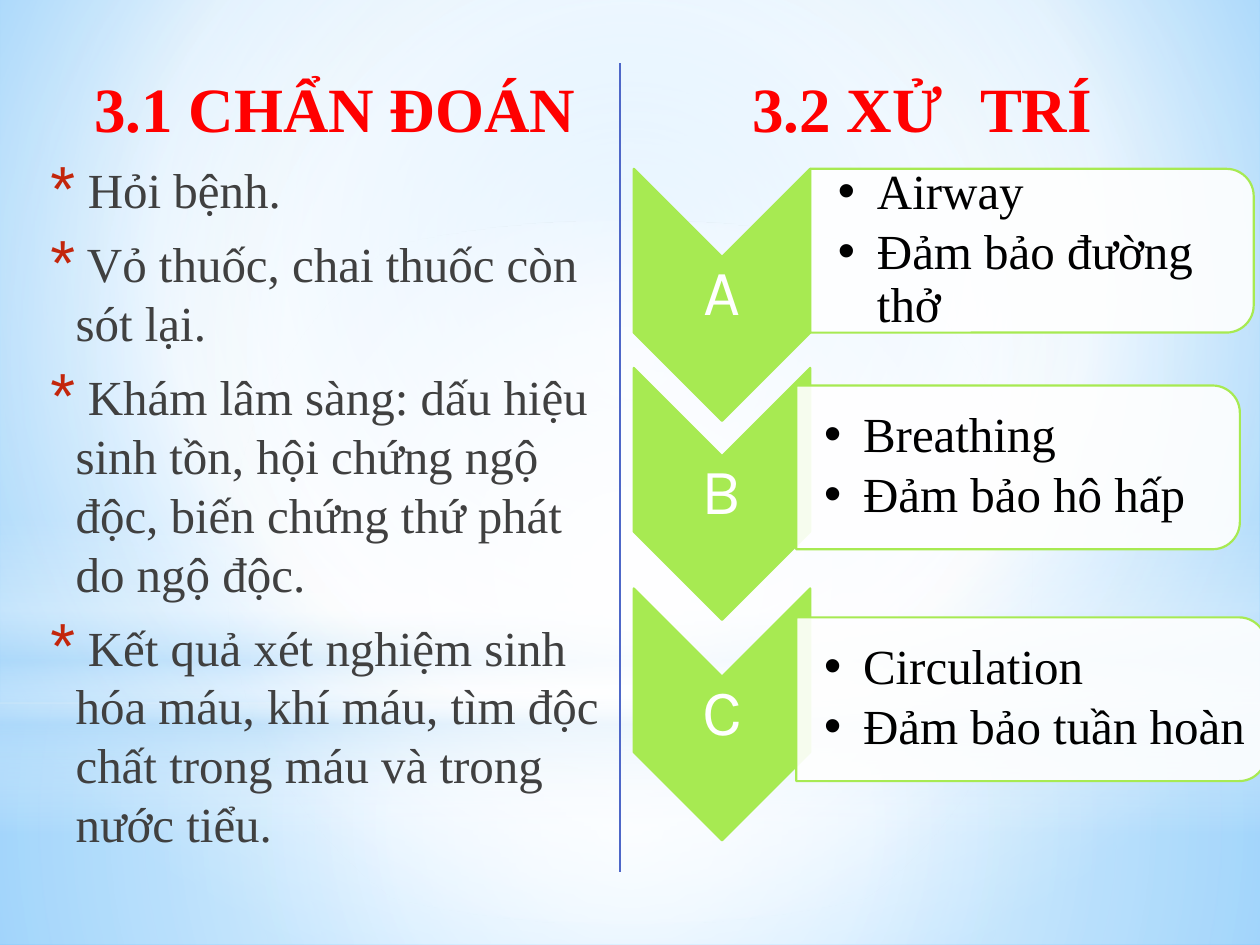
from lxml import etree
from pptx import Presentation
from pptx.dml.color import RGBColor
from pptx.enum import shapes as es, text as et
from pptx.oxml import parse_xml
from pptx.oxml.ns import nsdecls, qn
from pptx.util import Inches, Pt

SERIF, SANS = "Times New Roman", "Karla"
GREEN, RED, GREY = "A7EA52", "FF0000", "404040"
MID = (50, 50, 50, 50)

BACK = [(0, "9ED5FF", 100), (60, "FFFFFF", 100), (100, "5BB9FF", 100)]
# kind, box, gradient stops (place, colour, opacity), focus or None for vertical
LAYERS = [
    ("RECTANGLE", (0, 5.58, 10, 1.92),
     [(0, "FFFFFF", 91), (37, "FFFFFF", 76), (100, "B4DCFA", 79)], MID),
    ("RECTANGLE", (0, 0, 10, 5.58),
     [(0, "FFFFFF", 89), (48, "FFFFFF", 62), (100, "B4DCFA", 79)], MID),
    ("RECTANGLE", (0, 4.12, 10, 2.5),
     [(0, "FFFFFF", 0), (29, "FFFFFF", 30), (45, "B4DCFA", 40),
      (55, "FFFFFF", 26), (65, "B4DCFA", 60), (100, "FFFFFF", 0)], None),
    ("OVAL", (0, 1.75, 10, 5.58),
     [(0, "FFFFFF", 100), (56, "FFFFFF", 0)], MID),
]
SIGNS = [
    " Hỏi bệnh.",
    " Vỏ thuốc, chai thuốc còn sót lại.",
    " Khám lâm sàng: dấu hiệu sinh tồn, hội chứng ngộ độc, "
    "biến chứng thứ phát do ngộ độc.",
    " Kết quả xét nghiệm sinh hóa máu, khí máu, tìm độc chất "
    "trong máu và trong nước tiểu.",
]
# letter, chevron top, card left, card top, card width, lines
STEPS = [
    ("A", 1.34, 6.43, 1.34, 3.52, ["Airway", "Đảm bảo đường thở"]),
    ("B", 2.92, 6.32, 3.06, 3.52, ["Breathing", "Đảm bảo hô hấp"]),
    ("C", 4.67, 6.32, 4.9, 3.73, ["Circulation", "Đảm bảo tuần hoàn"]),
]
CHEV_X, CHEV_W, CHEV_H, CARD_H = 5.03, 1.4, 2, 1.3


def rgb(code):
    return RGBColor.from_string(code)


def inches(*nums):
    return [Inches(n) for n in nums]


def grad(stops, focus):
    """Gradient fill element: round about the focus, or top to bottom."""
    gs = "".join(
        f'<a:gs pos="{at * 1000}"><a:srgbClr val="{code}">'
        f'<a:alpha val="{seen * 1000}"/></a:srgbClr></a:gs>'
        for at, code, seen in stops)
    if focus:
        sides = " ".join(f'{s}="{n * 1000}"' for s, n in zip("ltrb", focus))
        way = f'<a:path path="circle"><a:fillToRect {sides}/></a:path>'
    else:
        way = '<a:lin ang="5400000" scaled="0"/>'
    return (f'<a:gradFill {nsdecls("a")} rotWithShape="1"><a:gsLst>{gs}'
            f'</a:gsLst>{way}</a:gradFill>')


def add_layer(kind, box, stops, focus):
    shape = slide.shapes.add_shape(
        getattr(es.MSO_SHAPE, kind), *inches(*box))
    shape.shadow.inherit = False
    shape.line.fill.background()
    geom = shape._element.spPr.find(qn("a:prstGeom"))
    geom.addnext(parse_xml(grad(stops, focus)))


def add_turned(kind, x, y, w, h, fill, seen=100):
    """Shape turned a quarter, given by the box it covers once turned."""
    shape = group.shapes.add_shape(
        kind, *inches(x + (w - h) / 2, y + (h - w) / 2, h, w))
    shape.rotation = 90
    shape.shadow.inherit = False
    shape.fill.solid()
    shape.fill.fore_color.rgb = rgb(fill)
    shape.line.color.rgb = rgb(GREEN)
    shape.line.width = Pt(1.25)
    if seen < 100:
        code = shape._element.spPr.find(qn("a:solidFill"))[0]
        etree.SubElement(code, qn("a:alpha")).set("val", str(seen * 1000))


def add_run(par, words, size, code, font=SERIF, bold=False):
    run = par.add_run()
    run.text = words
    run.font.size, run.font.name, run.font.bold = Pt(size), font, bold
    run.font.color.rgb = rgb(code)


def indent(par, left, first, sign=None, code=None, scale=100):
    """Set margins and bullet; no sign means no bullet."""
    props = par._p.get_or_add_pPr()
    props.set("marL", str(Inches(left)))
    props.set("indent", str(Inches(first)))
    if not sign:
        etree.SubElement(props, qn("a:buNone"))
        return
    if code:
        tint = etree.SubElement(props, qn("a:buClr"))
        etree.SubElement(tint, qn("a:srgbClr")).set("val", code)
    etree.SubElement(props, qn("a:buSzPct")).set("val", str(scale * 1000))
    etree.SubElement(props, qn("a:buFont")).set("typeface", "Arial")
    etree.SubElement(props, qn("a:buChar")).set("char", sign)


def next_par(frame):
    first = frame.paragraphs[0]
    return frame.add_paragraph() if first.runs else first


def add_box(x, y, w, h, left, pad):
    frame = group.shapes.add_textbox(*inches(x, y, w, h)).text_frame
    frame.word_wrap = True
    frame.vertical_anchor = et.MSO_ANCHOR.MIDDLE
    frame.margin_left = Inches(left)
    frame.margin_top = frame.margin_right = frame.margin_bottom = Inches(pad)
    return frame


def add_head(frame):
    par = next_par(frame)
    par.alignment = et.PP_ALIGN.CENTER
    par.space_after = Pt(3)
    indent(par, 0.05, 0)
    return par


deck = Presentation()
deck.slide_width, deck.slide_height = inches(10, 7.5)
slide = deck.slides.add_slide(deck.slide_layouts[1])
title = slide.shapes.title._element
title.getparent().remove(title)

slide.background.fill.solid()
plain = slide._element.cSld.find(".//" + qn("p:bgPr")).find(qn("a:solidFill"))
plain.getparent().replace(plain, parse_xml(grad(BACK, (20, 10, 20, 60))))
for layer in LAYERS:
    add_layer(*layer)

body = slide.placeholders[1]
body._element.getparent().append(body._element)
body.left, body.top, body.width, body.height = inches(0.25, 0.5, 9.33, 6.42)
frame = body.text_frame
frame.word_wrap = True
frame.auto_size = et.MSO_AUTO_SIZE.NONE
frame._txBody.bodyPr.set("numCol", "2")
add_run(add_head(frame), "3.1 CHẨN ĐOÁN", 36, RED, bold=True)
for sign in SIGNS:
    par = next_par(frame)
    par.space_after = Pt(3)
    indent(par, 0.25, -0.2, "*", "C3260C", 130)
    add_run(par, sign, 28, GREY)
head = add_head(frame)
add_run(head, "  ", 28, GREY)
add_run(head, "3.2 XỬ \tTRÍ", 36, RED, bold=True)

rule = slide.shapes.add_connector(
    es.MSO_CONNECTOR.STRAIGHT, *inches(4.92, 0.5, 4.92, 6.92))
rule.line.color.rgb = rgb("4E67C8")
rule.line.width = Pt(0.75)
etree.SubElement(rule._element.spPr, qn("a:effectLst"))

group = slide.shapes.add_group_shape()
for letter, top, x, y, w, lines in STEPS:
    add_turned(es.MSO_SHAPE.CHEVRON, CHEV_X, top, CHEV_W, CHEV_H, GREEN)
    par = add_box(CHEV_X, top + 0.7, CHEV_W, 0.6, 0.03, 0.03).paragraphs[0]
    par.alignment = et.PP_ALIGN.CENTER
    par.line_spacing = 0.9
    add_run(par, letter, 37, "FFFFFF", SANS)
    add_turned(es.MSO_SHAPE.ROUND_2_SAME_RECTANGLE, x, y, w, CARD_H,
               "FFFFFF", 90)
    card = add_box(x, y + 0.06, w - 0.07, CARD_H - 0.13, 0.22, 0.02)
    for line in lines:
        par = next_par(card)
        par.level = 1
        par.line_spacing = 0.9
        par.space_after = Pt(4.2)
        indent(par, 0.31, -0.31, "•")
        add_run(par, line, 28, "000000")

deck.save("out.pptx")
